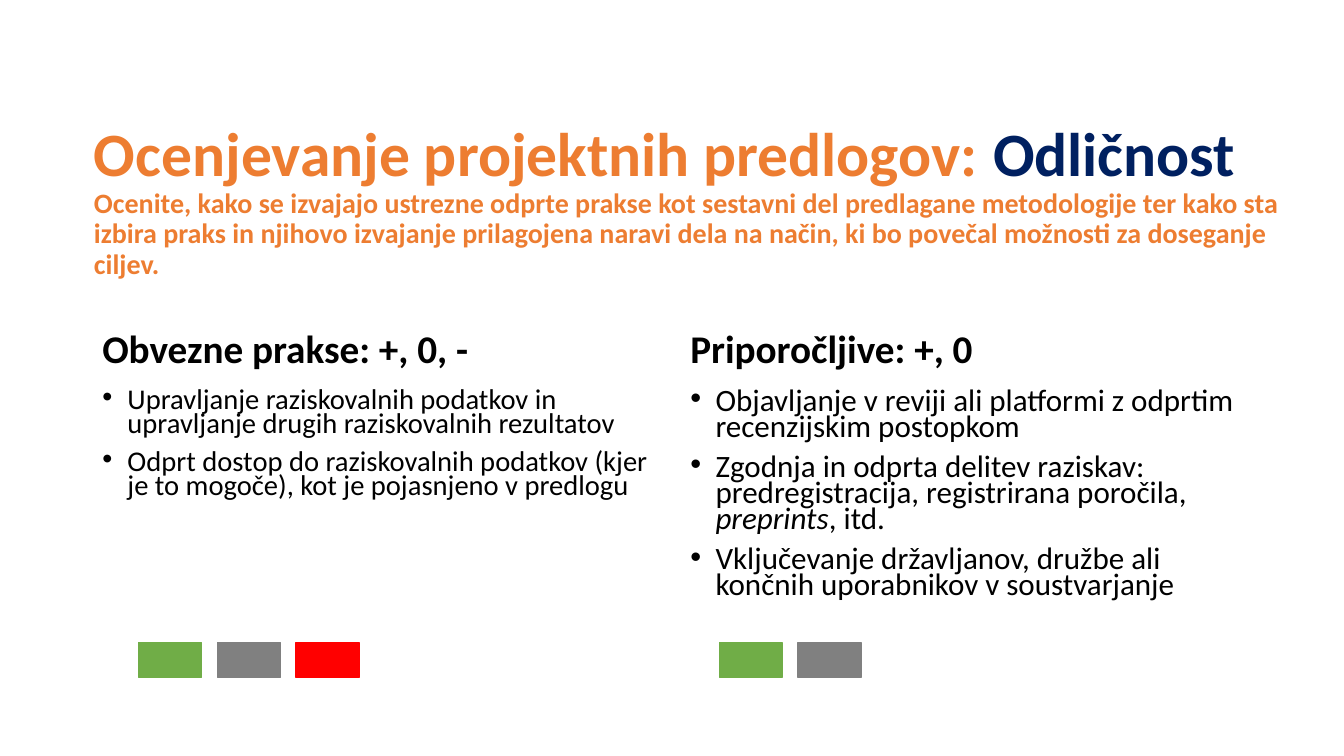
from dataclasses import dataclass

from lxml.etree import SubElement
from pptx import Presentation
from pptx.dml.color import RGBColor
from pptx.enum.shapes import MSO_SHAPE as Shape
from pptx.enum.text import MSO_ANCHOR as Anchor
from pptx.oxml.ns import qn
from pptx.util import Emu, Pt

PX = 9525  # EMU per px, 96 px to the inch


@dataclass(frozen=True)
class Theme:
    font: str = "Calibri"
    orange: str = "ED7D31"
    navy: str = "002060"
    black: str = "000000"
    green: str = "70AD47"
    grey: str = "808080"
    red: str = "FF0000"
    title: float = 44
    subtitle: float = 20
    heading: float = 28
    required_item: float = 20.4
    recommended_item: float = 22.2


THEME = Theme()


def px(*lengths):
    return [Emu(length * PX) for length in lengths]


def add_text_frame(slide, box, anchor):
    frame = slide.shapes.add_textbox(*px(*box)).text_frame
    frame.word_wrap = True
    frame.vertical_anchor = anchor
    return frame


def add_run(paragraph, text, size, color, **style):
    run = paragraph.add_run()
    run.text = text
    for name, value in {"name": THEME.font, "size": Pt(size), **style}.items():
        setattr(run.font, name, value)
    run.font.color.rgb = RGBColor.from_string(color)


def add_bullet(paragraph):
    props = paragraph._p.get_or_add_pPr()
    indent = 24 * PX
    props.set("marL", str(indent))
    props.set("indent", str(-indent))
    SubElement(props, qn("a:buFont"), typeface="Arial")
    SubElement(props, qn("a:buChar"), char="•")


def add_title(slide, box, topic, criterion, question):
    paragraph = add_text_frame(slide, box, Anchor.MIDDLE).paragraphs[0]
    paragraph.line_spacing = 0.9
    add_run(paragraph, topic, THEME.title, THEME.orange, bold=True)
    add_run(paragraph, criterion, THEME.title, THEME.navy, bold=True)
    paragraph.add_line_break()
    add_run(paragraph, question, THEME.subtitle, THEME.orange, bold=True)


def add_practices(slide, box, heading, items, item_size):
    """Heading over a bulleted list; each item is a list of (text, italic) parts."""
    left, top, width, height = box
    heading_height, list_offset = 86, 94
    title = add_text_frame(slide, (left, top, width, heading_height), Anchor.BOTTOM).paragraphs[0]
    title.line_spacing = 0.9
    add_run(title, heading, THEME.heading, THEME.black, bold=True)

    list_box = (left, top + list_offset, width, height - list_offset)
    frame = add_text_frame(slide, list_box, Anchor.TOP)
    for index, parts in enumerate(items):
        paragraph = frame.add_paragraph() if index else frame.paragraphs[0]
        add_bullet(paragraph)
        paragraph.line_spacing = 0.7
        if index:
            paragraph.space_before = Pt(10)
        for text, italic in parts:
            add_run(paragraph, text, item_size, THEME.black, italic=italic)


def add_ratings(slide, left, top, colors):
    """Row of equally spaced score swatches."""
    width, height, pitch = 63, 33, 75
    width = 60 if width > 60 else width
    for index, color in enumerate(colors):
        swatch = slide.shapes.add_shape(
            Shape.RECTANGLE, *px(left + index * pitch, top, width, height))
        swatch.shadow.inherit = False
        swatch.fill.solid()
        swatch.fill.fore_color.rgb = RGBColor.from_string(color)
        swatch.line.color.rgb = RGBColor.from_string(color)
        swatch.line.width = Pt(1)


def main():
    deck = Presentation()
    deck.slide_width, deck.slide_height = px(1280, 720)
    slide = deck.slides.add_slide(deck.slide_layouts[6])

    add_title(
        slide, (80, 112, 1180, 160),
        "Ocenjevanje projektnih predlogov: ", "Odličnost",
        "Ocenite, kako se izvajajo ustrezne odprte prakse kot sestavni del "
        "predlagane metodologije ter kako sta izbira praks in njihovo izvajanje "
        "prilagojena naravi dela na način, ki bo povečal možnosti za doseganje ciljev.")

    required = [
        [("Upravljanje raziskovalnih podatkov in upravljanje drugih "
          "raziskovalnih rezultatov", False)],
        [("Odprt dostop do raziskovalnih podatkov (kjer je to mogoče), "
          "kot je pojasnjeno v predlogu", False)],
    ]
    recommended = [
        [("Objavljanje v reviji ali platformi z odprtim recenzijskim postopkom", False)],
        [("Zgodnja in odprta delitev raziskav: predregistracija, "
          "registrirana poročila, ", False), ("preprints", True), (", itd.", False)],
        [("Vključevanje državljanov, družbe ali končnih uporabnikov "
          "v soustvarjanje", False)],
    ]
    add_practices(slide, (88, 273, 541, 352), "Obvezne prakse: +, 0, -",
                  required, THEME.required_item)
    add_practices(slide, (648, 273, 544, 328), "Priporočljive: +, 0",
                  recommended, THEME.recommended_item)
    add_ratings(slide, 132, 612, [THEME.green, THEME.grey, THEME.red])
    add_ratings(slide, 685, 612, [THEME.green, THEME.grey])

    deck.save("out.pptx")


if __name__ == "__main__":
    main()
